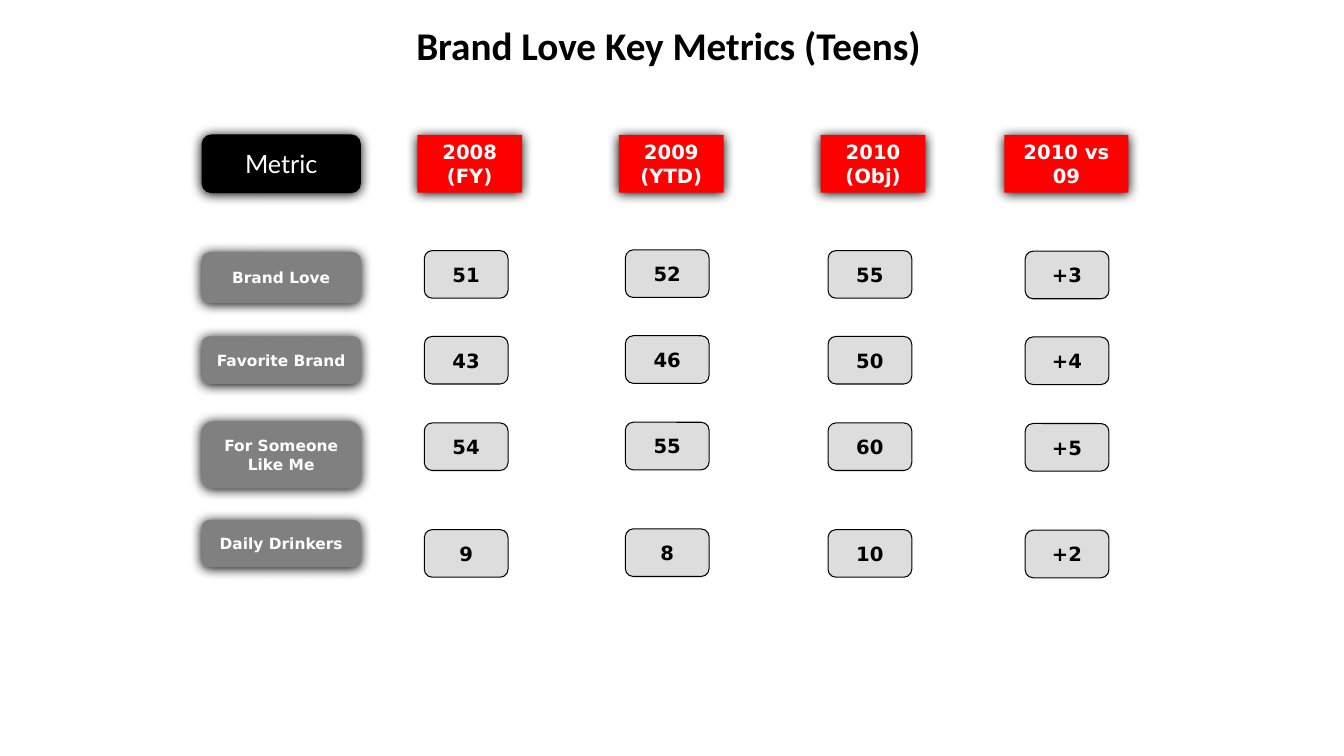
import pptx
import pptx.util
import pptx.dml.color
import pptx.enum.shapes
import pptx.enum.text
import pptx.oxml
import pptx.oxml.ns

Pt = pptx.util.Pt
RGBColor = pptx.dml.color.RGBColor
RECTANGLE = pptx.enum.shapes.MSO_SHAPE.RECTANGLE
ROUNDED = pptx.enum.shapes.MSO_SHAPE.ROUNDED_RECTANGLE
TOP = pptx.enum.text.MSO_ANCHOR.TOP
MIDDLE = pptx.enum.text.MSO_ANCHOR.MIDDLE

BLACK = RGBColor(0x00, 0x00, 0x00)
WHITE = RGBColor(0xFF, 0xFF, 0xFF)
RED = RGBColor(0xFF, 0x00, 0x00)
GREY = RGBColor(0x80, 0x80, 0x80)
LIGHT_GREY = RGBColor(0xDD, 0xDD, 0xDD)

LABEL_LEFT, LABEL_WIDTH = 144, 113.8
HEADER_TOP, HEADER_HEIGHT = 96.4, 41.2
VALUE_WIDTH, VALUE_HEIGHT = 59.8, 34

COLUMNS = [
    ("2008 (FY)", 298.1, 74.9, 303.1, 0),
    ("2009 (YTD)", 442.1, 74.9, 446.7, -0.5),
    ("2010 (Obj)", 586.2, 74.9, 591.5, 0),
    ("2010 vs 09", 717.5, 88.6, 732.3, 0.4),
]
ROWS = [
    ("Brand Love", 180, 36.7, 179, ("51", "52", "55", "+3")),
    ("Favorite Brand", 240.2, 34, 240.3, ("43", "46", "50", "+4")),
    ("For Someone Like Me", 301, 48, 302.1, ("54", "55", "60", "+5")),
    ("Daily Drinkers", 371.3, 34, 378.3, ("9", "8", "10", "+2")),
]

SHADOW_XML = (
    '<a:outerShdw %s blurRad="%d" dist="%d" dir="5400000" algn="t" rotWithShape="0">'
    '<a:srgbClr val="000000"/></a:outerShdw>'
    % (pptx.oxml.ns.nsdecls("a"), Pt(8.5), Pt(1))
)


def write_text(shape, text, size, color, font_name="DejaVu Sans", bold=True, anchor=MIDDLE):
    frame = shape.text_frame
    frame.word_wrap = True
    frame.vertical_anchor = anchor
    paragraph = frame.paragraphs[0]
    paragraph.text = text
    paragraph.alignment = pptx.enum.text.PP_ALIGN.CENTER
    paragraph.font.name = font_name
    paragraph.font.size = Pt(size)
    paragraph.font.bold = bold
    paragraph.font.color.rgb = color


def add_box(slide, kind, left, top, width, height, fill):
    shape = slide.shapes.add_shape(kind, Pt(left), Pt(top), Pt(width), Pt(height))
    shape.shadow.inherit = False
    shape.fill.solid()
    shape.fill.fore_color.rgb = fill
    shape.line.fill.background()
    return shape


def add_shadowed_box(slide, kind, left, top, width, height, fill):
    shape = add_box(slide, kind, left, top, width, height, fill)
    effects = shape._element.spPr.find(pptx.oxml.ns.qn("a:effectLst"))
    effects.append(pptx.oxml.parse_xml(SHADOW_XML))
    return shape


def add_title(slide, text):
    title = slide.shapes.add_textbox(Pt(150.5), Pt(2.2), Pt(653.8), Pt(59.8))
    write_text(title, text, 28, BLACK, "Calibri")


def add_corner(slide, text):
    corner = add_shadowed_box(
        slide, ROUNDED, LABEL_LEFT, 96, LABEL_WIDTH, 42, BLACK)
    write_text(corner, text, 18, WHITE, "Lato", bold=False)


def add_column_header(slide, text, left, width):
    header = add_shadowed_box(
        slide, RECTANGLE, left, HEADER_TOP, width, HEADER_HEIGHT, RED)
    write_text(header, text, 14, WHITE, anchor=TOP)


def add_row_label(slide, text, top, height):
    label = add_shadowed_box(
        slide, ROUNDED, LABEL_LEFT, top, LABEL_WIDTH, height, GREY)
    write_text(label, text, 11, WHITE)


def add_value(slide, text, left, top):
    value = add_box(slide, ROUNDED, left, top, VALUE_WIDTH, VALUE_HEIGHT, LIGHT_GREY)
    value.line.color.rgb = BLACK
    value.line.width = Pt(0.75)
    write_text(value, text, 14, BLACK)


def main():
    presentation = pptx.Presentation()
    presentation.slide_width = Pt(960)
    presentation.slide_height = Pt(540)
    slide = presentation.slides.add_slide(presentation.slide_layouts[6])

    add_title(slide, "Brand Love Key Metrics (Teens)")
    add_corner(slide, "Metric")
    for text, left, width, _, _ in COLUMNS:
        add_column_header(slide, text, left, width)
    for label, label_top, label_height, value_top, values in ROWS:
        add_row_label(slide, label, label_top, label_height)
        for (_, _, _, value_left, shift), value in zip(COLUMNS, values):
            add_value(slide, value, value_left, value_top + shift)

    presentation.save("out.pptx")


if __name__ == "__main__":
    main()
